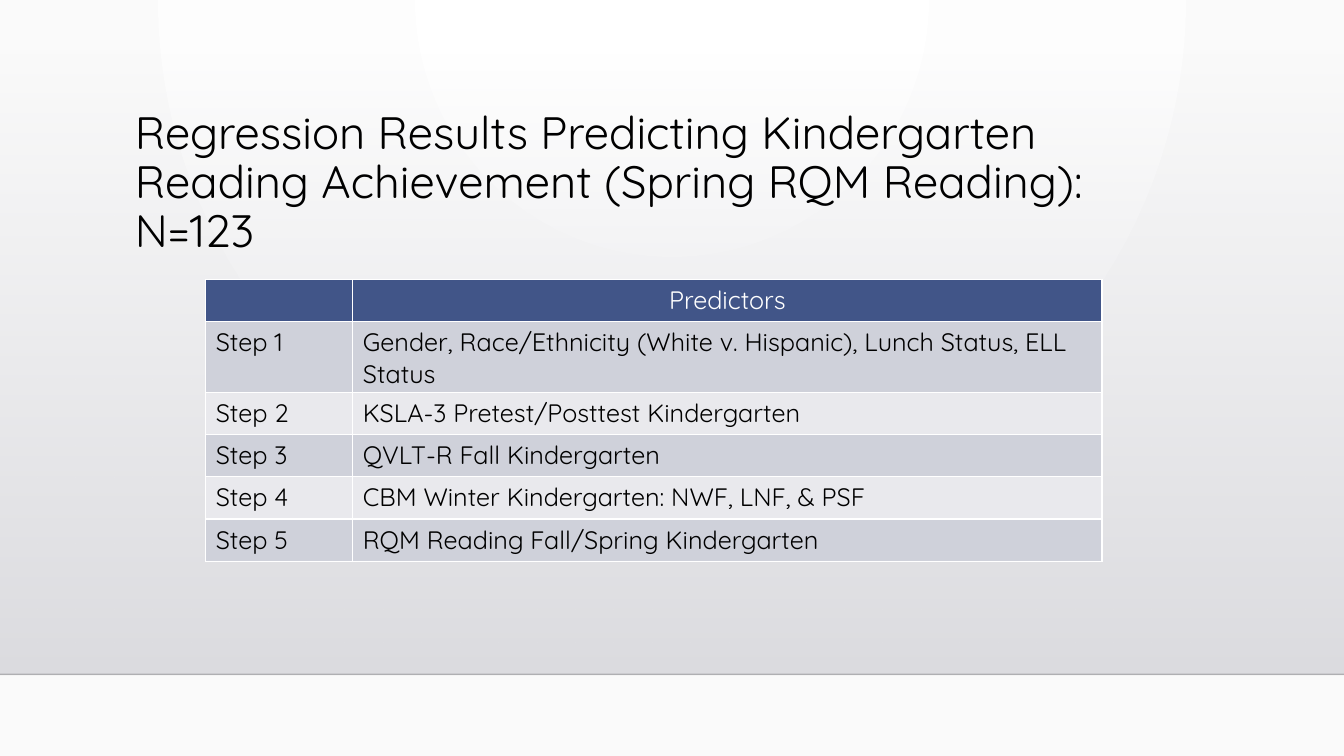
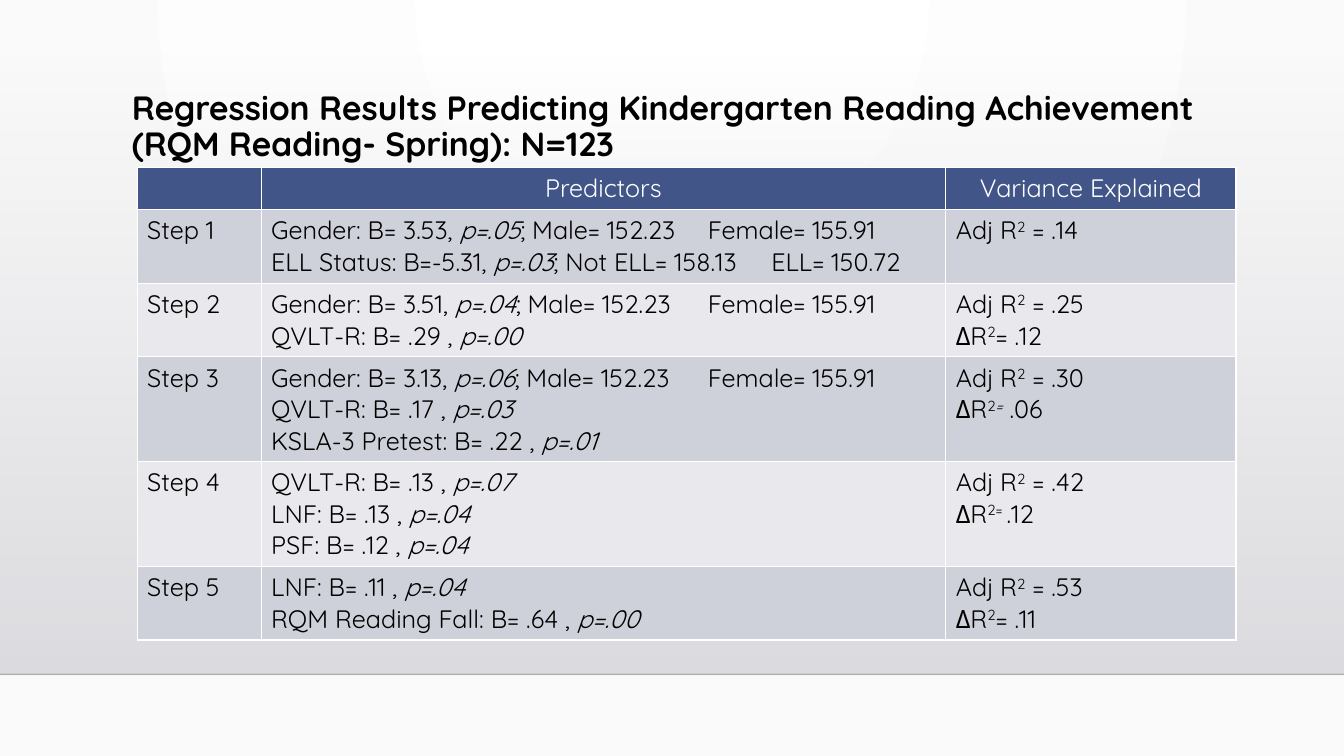
"""Builds two slides that report regression results in tables."""
from collections.abc import Iterator
from dataclasses import dataclass

from lxml.etree import SubElement
from pptx import Presentation
from pptx.dml.color import RGBColor
from pptx.enum.shapes import MSO_CONNECTOR, MSO_SHAPE
from pptx.enum.text import MSO_ANCHOR, PP_ALIGN
from pptx.oxml import parse_xml
from pptx.oxml.ns import nsdecls, qn
from pptx.util import Inches, Pt

FONT = "Quicksand"
WIDTH, HEIGHT = 13.33, 7.5
BAND_TOP, BAND_BOTTOM = 0.51, 6.69
ROW_HEIGHT, EXTRA_LINE = 0.42, 0.31
TAB_STOPS = (4.33, 4.96)
COLORS = {
    "white": "FFFFFF",
    "paper": "FAFAFA",
    "band_top": "DCDCE0",
    "band_bottom": "DEDEE2",
    "rule": "000001",
    "text": "000000",
    "header": "415588",
    "odd_row": "CFD1DA",
    "even_row": "E9E9ED",
}


@dataclass(frozen=True)
class ResultsPage:
    """A title with its place and style, and the table below it."""
    title: str
    title_box: tuple[float, float, float, float]
    title_size: float
    title_bold: bool
    table_at: tuple[float, float]
    widths: tuple[float, ...]
    rows: tuple[tuple[str, ...], ...]


PAGES = (
    ResultsPage(
        "Regression Results Predicting Kindergarten Reading Achievement (Spring RQM Reading): N=123",
        (1.24, 1.04, 10.5, 1.15), 32.4, False, (2.04, 2.77), (1.46, 7.43),
        (
            ("", "Predictors"),
            ("Step 1", "Gender, Race/Ethnicity (White v. Hispanic), Lunch Status, ELL Status"),
            ("Step 2", "KSLA-3 Pretest/Posttest Kindergarten"),
            ("Step 3", "QVLT-R Fall Kindergarten"),
            ("Step 4", "CBM Winter Kindergarten: NWF, LNF, & PSF"),
            ("Step 5", "RQM Reading Fall/Spring Kindergarten"),
        ),
    ),
    ResultsPage(
        "Regression Results Predicting Kindergarten Reading Achievement (RQM Reading- Spring): N=123",
        (1.21, 0.86, 11.5, 1.45), 24, True, (1.36, 1.66), (1.23, 6.79, 2.88),
        (
            ("", "Predictors", "Variance Explained"),
            ("Step 1",
             "Gender: B= 3.53, *p=.05*; Male= 152.23\tFemale= 155.91\n"
             "ELL Status: B=-5.31, *p=.03*; Not ELL= 158.13\tELL= 150.72",
             "Adj R^2^ = .14"),
            ("Step 2",
             "Gender: B= 3.51, *p=.04*; Male= 152.23\tFemale= 155.91\n"
             "QVLT-R: B= .29 , *p=.00*",
             "Adj R^2^ = .25\nΔR^2^= .12"),
            ("Step 3",
             "Gender: B= 3.13, *p=.06*; Male= 152.23\tFemale= 155.91\n"
             "QVLT-R: B= .17 , *p=.03*\n"
             "KSLA-3 Pretest: B= .22 , *p=.01*",
             "Adj R^2^ = .30\nΔR^2*=*^ .06"),
            ("Step 4",
             "QVLT-R: B= .13 , *p=.07*\nLNF: B= .13 , *p=.04*\nPSF: B= .12 , *p=.04*",
             "Adj R^2^ = .42\nΔR^2= ^.12"),
            ("Step 5",
             "LNF: B= .11 , *p=.04*\nRQM Reading Fall: B= .64 , *p=.00*",
             "Adj R^2^ = .53\nΔR^2^= .11"),
        ),
    ),
)


def rgb(name: str) -> RGBColor:
    """Return a named colour."""
    return RGBColor.from_string(COLORS[name])


def split_runs(text: str) -> Iterator[tuple[str, bool, bool]]:
    """Yield text, italic and superscript; * and ^ switch these on and off."""
    italic = raised = False
    part = ""
    for ch in text + "^":
        if ch not in "*^":
            part += ch
            continue
        if part:
            yield part, italic, raised
        part = ""
        italic ^= ch == "*"
        raised ^= ch == "^"


def write_text(tf, text: str, *, size: float = 18, color: str = "text", bold: bool = False,
               align=PP_ALIGN.LEFT, spacing: float | None = None) -> None:
    """Fill a text frame with one paragraph for each line of text."""
    for i, line in enumerate(text.split("\n")):
        p = tf.add_paragraph() if i else tf.paragraphs[0]
        p.alignment = align
        if spacing:
            p.line_spacing = spacing
        if "\t" in line:
            tabs = SubElement(p._p.get_or_add_pPr(), qn("a:tabLst"))
            for stop in TAB_STOPS:
                SubElement(tabs, qn("a:tab"), pos=str(Inches(stop)), algn="l")
        for part, italic, raised in split_runs(line):
            r = p.add_run()
            r.text = part
            r.font.name, r.font.size = FONT, Pt(size)
            r.font.bold, r.font.italic = bold, italic
            r.font.color.rgb = rgb(color)
            if raised:
                r._r.get_or_add_rPr().set("baseline", "30000")


def set_gradient(fill, *names: str) -> None:
    """Give a fill a gradient of two named colours."""
    fill.gradient()
    for stop, name in zip(fill.gradient_stops, names):
        stop.color.rgb = rgb(name)


def set_alpha(color, percent: int) -> None:
    """Set the opacity of a colour element."""
    SubElement(color, qn("a:alpha"), val=str(percent * 1000))


def set_background(master) -> None:
    """Give the master a radial gradient from the top centre."""
    set_gradient(master.background.fill, "white", "paper")
    lin = master.element.xpath("./p:cSld/p:bg//a:lin")[0]
    lin.getparent().replace(lin, parse_xml(
        f'<a:path {nsdecls("a")} path="circle">'
        '<a:fillToRect l="43000" t="0" r="43000" b="100000"/></a:path>'))


def add_band(slide) -> None:
    """Draw the fading band and the rule along its lower edge."""
    s = slide.shapes.add_shape(MSO_SHAPE.RECTANGLE, 0, Inches(BAND_TOP), Inches(WIDTH),
                               Inches(BAND_BOTTOM - BAND_TOP))
    s.shadow.inherit = False
    s.line.fill.background()
    set_gradient(s.fill, "band_top", "band_bottom")
    s.fill.gradient_angle = 270
    set_alpha(s._element.spPr.xpath(".//a:gs[1]/a:srgbClr")[0], 0)
    rule = slide.shapes.add_connector(MSO_CONNECTOR.STRAIGHT, 0, Inches(BAND_BOTTOM),
                                      Inches(WIDTH), Inches(BAND_BOTTOM))
    rule.line.width = Pt(1)
    rule.line.color.rgb = rgb("rule")
    sp_pr = rule._element.spPr
    set_alpha(sp_pr.xpath("./a:ln//a:srgbClr")[0], 20)
    SubElement(sp_pr, qn("a:effectLst"))


def add_title(slide, page: ResultsPage) -> None:
    """Draw the title."""
    tf = slide.shapes.add_textbox(*map(Inches, page.title_box)).text_frame
    tf.word_wrap = True
    tf.vertical_anchor = MSO_ANCHOR.TOP
    write_text(tf, page.title, size=page.title_size, bold=page.title_bold, spacing=0.9)


def set_borders(cell) -> None:
    """Draw thin white cell borders."""
    tc_pr = cell._tc.get_or_add_tcPr()
    for side in "LRTB":
        ln = SubElement(tc_pr, qn(f"a:ln{side}"), w=str(Pt(1)))
        SubElement(SubElement(ln, qn("a:solidFill")), qn("a:srgbClr"), val=COLORS["white"])


def add_results(slide, page: ResultsPage) -> None:
    """Draw the table, with rows as high as their lines need."""
    heights = [ROW_HEIGHT + EXTRA_LINE * max(text.count("\n") for text in row)
               for row in page.rows]
    table = slide.shapes.add_table(
        len(page.rows), len(page.widths), *map(Inches, page.table_at),
        Inches(sum(page.widths)), Inches(sum(heights))).table
    for column, width in zip(table.columns, page.widths):
        column.width = Inches(width)
    for i, (row, height) in enumerate(zip(page.rows, heights)):
        table.rows[i].height = Inches(height)
        fill = "header" if i == 0 else "odd_row" if i % 2 else "even_row"
        for j, text in enumerate(row):
            cell = table.cell(i, j)
            set_borders(cell)
            cell.fill.solid()
            cell.fill.fore_color.rgb = rgb(fill)
            write_text(cell.text_frame, text, color="text" if i else "white",
                       align=PP_ALIGN.LEFT if i else PP_ALIGN.CENTER)


def main() -> None:
    """Build and save the presentation."""
    prs = Presentation()
    prs.slide_width, prs.slide_height = Inches(WIDTH), Inches(HEIGHT)
    set_background(prs.slide_master)
    for page in PAGES:
        slide = prs.slides.add_slide(prs.slide_layouts[6])
        add_band(slide)
        add_title(slide, page)
        add_results(slide, page)
    prs.save("out.pptx")


if __name__ == "__main__":
    main()
